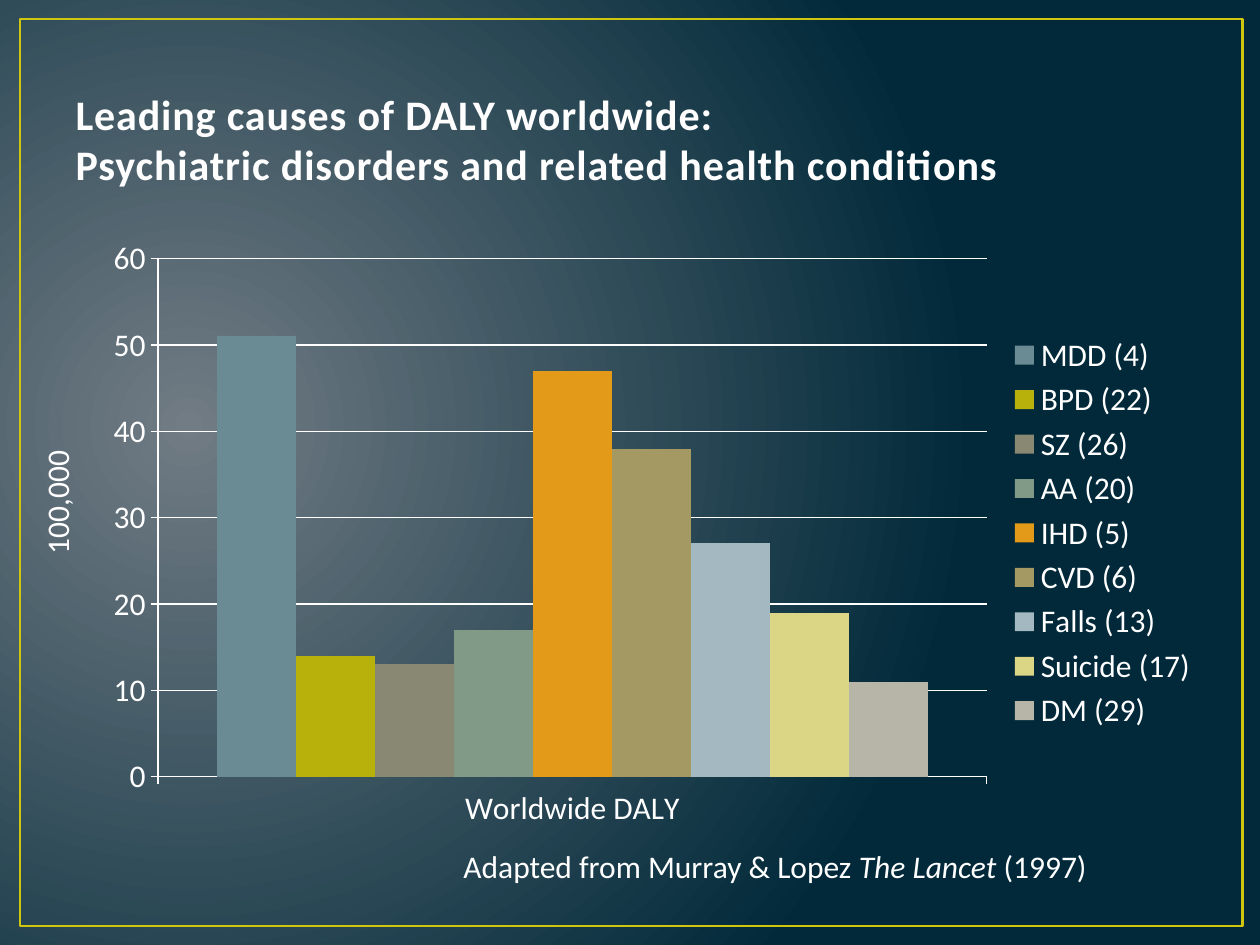
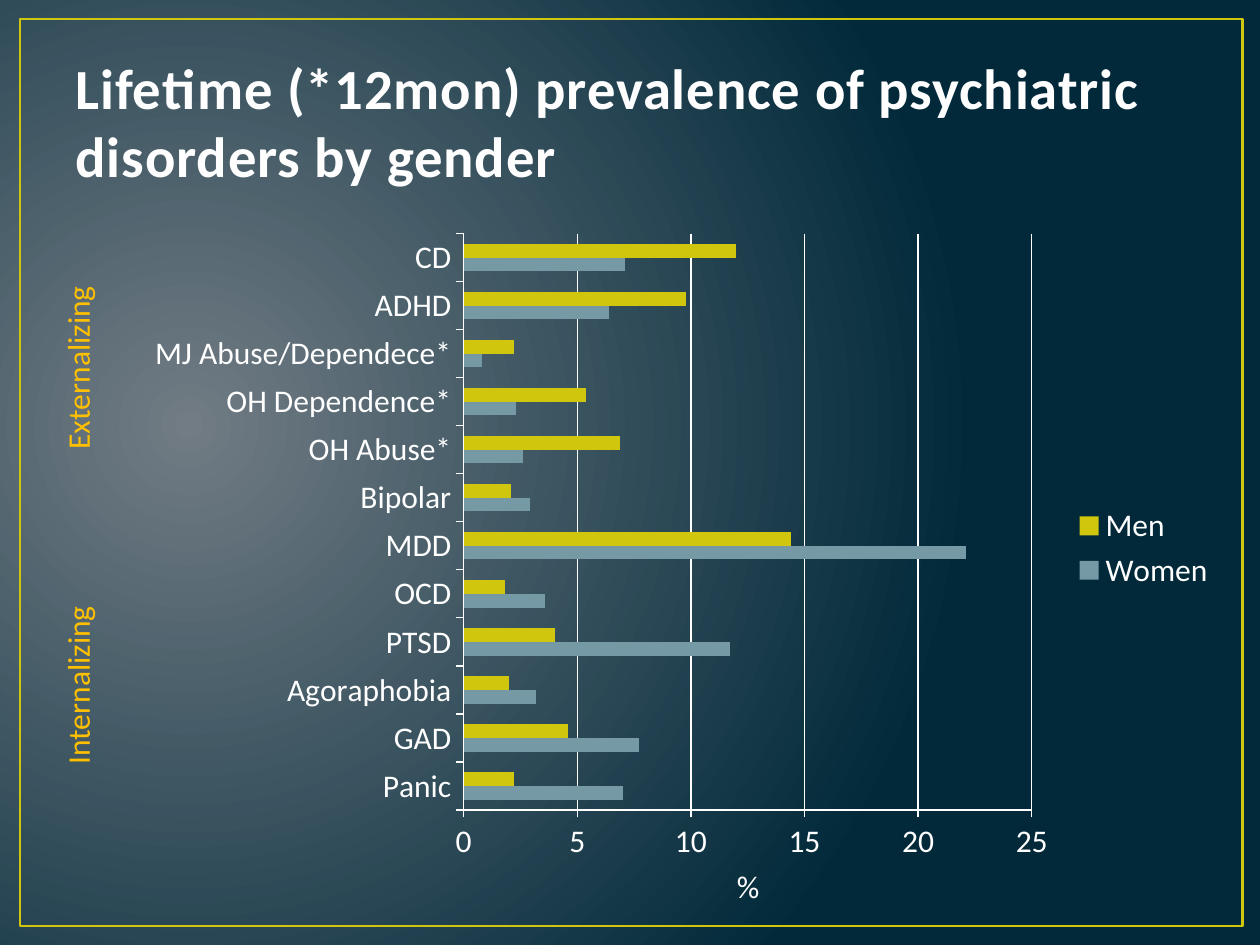
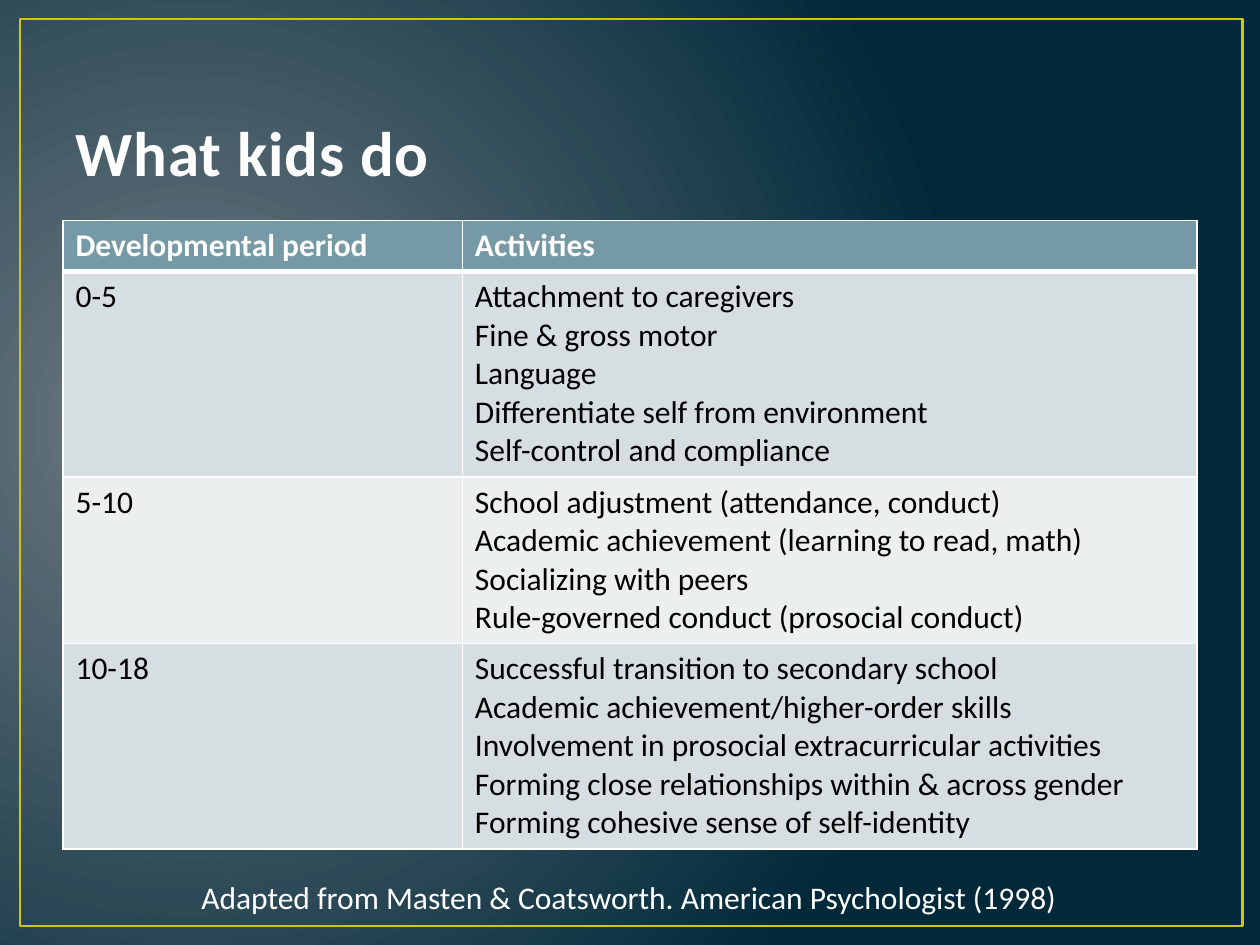
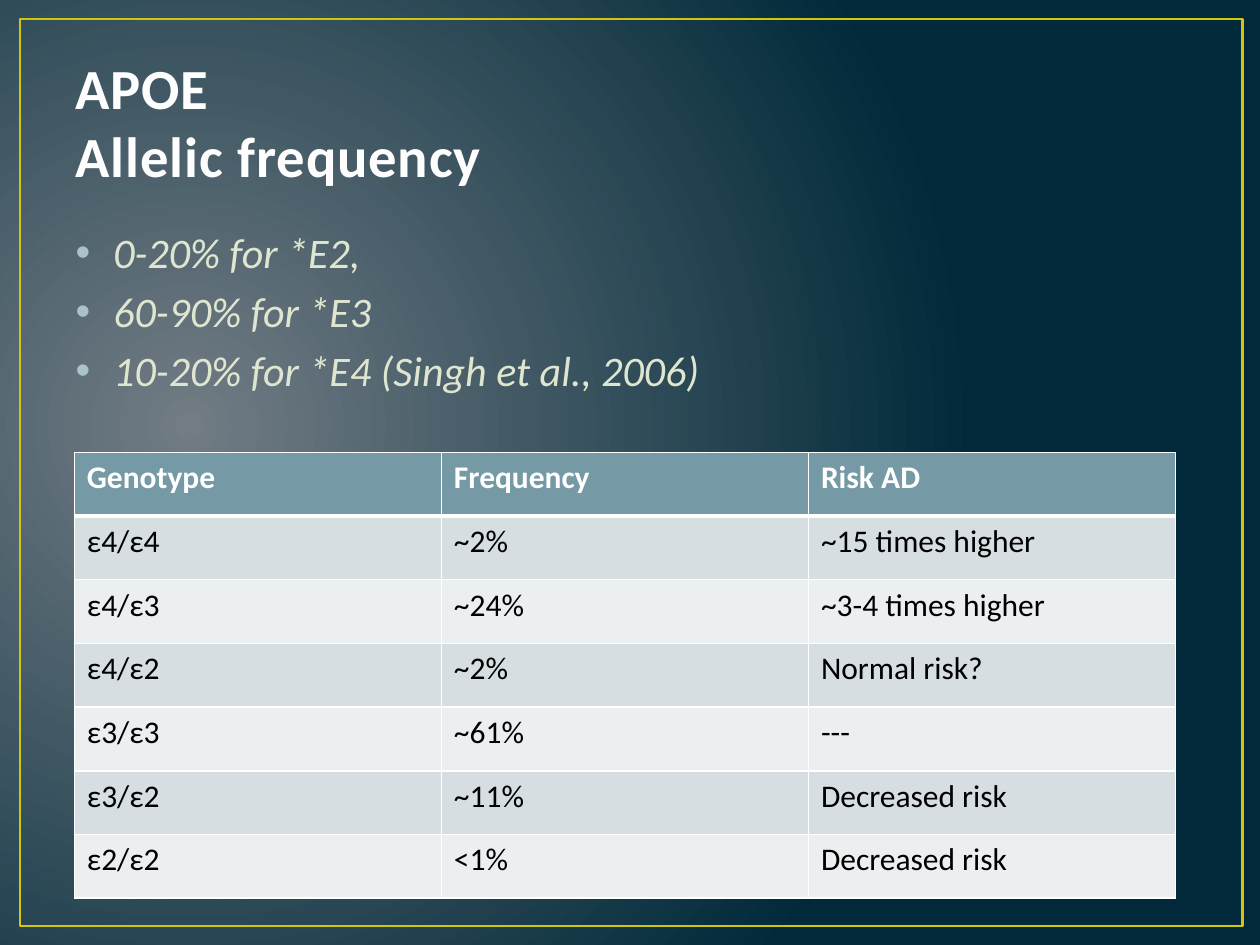
import copy
from dataclasses import dataclass
from typing import Any

import lxml.etree
import pptx
import pptx.chart.chart
import pptx.chart.data
import pptx.dml.color
import pptx.enum.chart
import pptx.enum.shapes
import pptx.enum.text
import pptx.oxml.ns
import pptx.presentation
import pptx.slide
import pptx.util

qn = pptx.oxml.ns.qn
Inches = pptx.util.Inches
Pt = pptx.util.Pt

FONT = "Calibri"
TEXT_SIZE = 18
COLORS = {
    "glow": "717C84", "night": "01293A", "frame": "CFC60D",
    "title": "FEFEFE", "title_edge": "384F55",
    "white": "FFFFFF", "black": "000000", "amber": "FFC000",
    "list": "DFE6D0", "bullet": "ACC2C9",
    "header": "759AA5", "odd_row": "D6DEE1", "even_row": "ECEFF0",
    "women": "759AA5", "men": "CFC60D",
    "mdd": "6A8B93", "bpd": "B9B10B", "sz": "898872", "aa": "819A87",
    "ihd": "E39A18", "cvd": "A49863", "falls": "A3B8C0",
    "suicide": "DBD686", "dm": "B6B5A7",
}
TITLE_ONLY, TITLE_AND_CONTENT = 5, 1


@dataclass
class Box:
    left: float
    top: float
    width: float
    height: float

    def lengths(self) -> list[int]:
        return [Inches(value) for value in (self.left, self.top, self.width, self.height)]


@dataclass
class Label:
    box: Box
    pieces: list[tuple[str, bool]]  # text, italic
    color: str = "white"
    rotation: int = 0


@dataclass
class Series:
    name: str
    values: list[float]
    color: str


@dataclass
class ChartPlan:
    kind: Any
    box: Box
    plot_area: dict[str, float]  # fractions of the chart
    categories: list[str]
    series: list[Series]
    maximum: float
    step: float


@dataclass
class TablePlan:
    box: Box
    columns: list[float]
    row_heights: list[float]
    rows: list[tuple[str, ...]]


def rgb(name: str) -> pptx.dml.color.RGBColor:
    return pptx.dml.color.RGBColor.from_string(COLORS[name])


def set_font(font: Any, color: str, size: float = TEXT_SIZE, **extra: Any) -> None:
    for attribute, value in {"name": FONT, "size": Pt(size), **extra}.items():
        setattr(font, attribute, value)
    font.color.rgb = rgb(color)


def add_color(parent: Any, tag: str, color: str) -> None:
    holder = lxml.etree.SubElement(parent, qn(tag))
    lxml.etree.SubElement(holder, qn("a:srgbClr"), val=COLORS[color])


def add_outline(parent: Any, tag: str, width: float, color: str) -> None:
    outline = lxml.etree.SubElement(parent, qn(tag), w=str(Pt(width)))
    add_color(outline, "a:solidFill", color)


def place(shape: Any, box: Box) -> None:
    shape.left, shape.top, shape.width, shape.height = box.lengths()


def paint_background(master: pptx.slide.SlideMaster) -> None:
    fill = master.background.fill
    fill.gradient()
    for stop, color in zip(fill.gradient_stops, ("glow", "night")):
        stop.color.rgb = rgb(color)
    gradient = master.element.find(".//" + qn("p:bg") + "//" + qn("a:gradFill"))
    gradient.remove(gradient.find(qn("a:lin")))
    circle = lxml.etree.SubElement(gradient, qn("a:path"))
    circle.set("path", "circle")
    lxml.etree.SubElement(circle, qn("a:fillToRect"),
                          l="15000", t="50000", r="85000", b="60000")


def add_frame(master: pptx.slide.SlideMaster, slide: pptx.slide.Slide) -> None:
    """Draw the border on a slide, then move it to the back of the master."""
    frame = slide.shapes.add_shape(pptx.enum.shapes.MSO_SHAPE.RECTANGLE,
                                   *Box(0.16, 0.15, 9.7, 7.2).lengths())
    frame.shadow.inherit = False
    frame.fill.background()
    frame.line.color.rgb = rgb("frame")
    frame.line.width = Pt(1.5)
    frame.element.nvSpPr.cNvPr.set("id", "20")
    master.shapes.element.insert(2, frame.element)


def add_slide(presentation: pptx.presentation.Presentation, title: str, size: float,
              layout: int = TITLE_ONLY) -> pptx.slide.Slide:
    slide = presentation.slides.add_slide(presentation.slide_layouts[layout])
    shape = slide.shapes.title
    place(shape, Box(0.5, 0.3, 9, 1.25))
    frame = shape.text_frame
    frame.text = title
    frame.auto_size = pptx.enum.text.MSO_AUTO_SIZE.NONE
    frame.vertical_anchor = pptx.enum.text.MSO_ANCHOR.BOTTOM
    paragraph = frame.paragraphs[0]
    paragraph.alignment = pptx.enum.text.PP_ALIGN.LEFT
    for run in paragraph.runs:
        properties = run.font._element
        properties.set("spc", "50")
        add_outline(properties, "a:ln", 1.05, "title_edge")
        set_font(run.font, "title", size, bold=True)
    for line_break in paragraph._p.findall(qn("a:br")):
        line_break.insert(0, copy.deepcopy(paragraph.runs[0].font._element))
    return slide


def add_label(slide: pptx.slide.Slide, label: Label) -> None:
    shape = slide.shapes.add_textbox(*label.box.lengths())
    shape.rotation = label.rotation
    shape.text_frame.word_wrap = True
    for text, italic in label.pieces:
        run = shape.text_frame.paragraphs[0].add_run()
        run.text = text
        set_font(run.font, label.color, italic=italic)


def fill_list(shape: Any, items: list[str]) -> None:
    place(shape, Box(0.5, 1.75, 9, 4.95))
    frame = shape.text_frame
    frame.auto_size = pptx.enum.text.MSO_AUTO_SIZE.NONE
    for index, item in enumerate(items):
        paragraph = frame.add_paragraph() if index else frame.paragraphs[0]
        properties = paragraph._p.get_or_add_pPr()
        properties.set("marL", str(Inches(0.3)))
        properties.set("indent", str(Inches(-0.3)))
        add_color(properties, "a:buClr", "bullet")
        lxml.etree.SubElement(properties, qn("a:buFont"), typeface="Arial")
        lxml.etree.SubElement(properties, qn("a:buChar"), char="•")
        paragraph.space_before = Pt(4.8 if index else 0)
        run = paragraph.add_run()
        run.text = item
        set_font(run.font, "list", 24, italic=True)


def fix_plot_area(chart: pptx.chart.chart.Chart, fractions: dict[str, float]) -> None:
    plot_area = chart.element.find(".//" + qn("c:plotArea"))
    for old in plot_area.findall(qn("c:layout")):
        plot_area.remove(old)
    layout = plot_area.makeelement(qn("c:layout"))
    plot_area.insert(0, layout)
    manual = lxml.etree.SubElement(layout, qn("c:manualLayout"))
    settings = {"layoutTarget": "inner", "xMode": "edge", "yMode": "edge", **fractions}
    for name, value in settings.items():
        lxml.etree.SubElement(manual, qn(f"c:{name}"), val=str(value))


def add_chart(slide: pptx.slide.Slide, plan: ChartPlan) -> None:
    data = pptx.chart.data.CategoryChartData()
    data.categories = plan.categories
    for series in plan.series:
        data.add_series(series.name, series.values)
    chart = slide.shapes.add_chart(plan.kind, *plan.box.lengths(), data).chart
    chart.has_title = False
    set_font(chart.font, "white")
    chart.has_legend = True
    chart.legend.position = pptx.enum.chart.XL_LEGEND_POSITION.RIGHT
    chart.legend.include_in_layout = False
    set_font(chart.legend.font, "white")

    plot = chart.plots[0]
    for attribute, value in {"gap_width": 150, "overlap": 0,
                             "vary_by_categories": False}.items():
        setattr(plot, attribute, value)
    for drawn, series in zip(plot.series, plan.series):
        drawn.invert_if_negative = False
        drawn.format.fill.solid()
        drawn.format.fill.fore_color.rgb = rgb(series.color)

    value_axis = chart.value_axis
    for attribute, value in {"minimum_scale": 0, "maximum_scale": plan.maximum,
                             "major_unit": plan.step, "has_major_gridlines": True}.items():
        setattr(value_axis, attribute, value)
    for axis in (chart.category_axis, value_axis):
        axis.major_tick_mark = pptx.enum.chart.XL_TICK_MARK.OUTSIDE
        set_font(axis.tick_labels.font, "white")
    for lined in (chart.category_axis, value_axis, value_axis.major_gridlines):
        lined.format.line.color.rgb = rgb("white")
        lined.format.line.width = Pt(0.75)
    fix_plot_area(chart, plan.plot_area)


def format_cell(cell: Any, row: int) -> None:
    thick_side = {0: "a:lnB", 1: "a:lnT"}.get(row)
    properties = cell._tc.get_or_add_tcPr()
    for side in ("a:lnL", "a:lnR", "a:lnT", "a:lnB"):
        add_outline(properties, side, 3 if side == thick_side else 1, "white")
    cell.fill.solid()
    fill = "header" if row == 0 else "odd_row" if row % 2 else "even_row"
    cell.fill.fore_color.rgb = rgb(fill)
    for paragraph in cell.text_frame.paragraphs:
        for run in paragraph.runs:
            set_font(run.font, "black" if row else "white", bold=row == 0)


def add_table(slide: pptx.slide.Slide, plan: TablePlan) -> None:
    table = slide.shapes.add_table(len(plan.rows), len(plan.columns),
                                   *plan.box.lengths()).table
    for column, width in zip(table.columns, plan.columns):
        column.width = Inches(width)
    for row, height in zip(table.rows, plan.row_heights):
        row.height = Inches(height)
    for row_index, texts in enumerate(plan.rows):
        for column_index, text in enumerate(texts):
            cell = table.cell(row_index, column_index)
            cell.text = text
            format_cell(cell, row_index)


DALY_CHART = ChartPlan(
    pptx.enum.chart.XL_CHART_TYPE.COLUMN_CLUSTERED,
    Box(0.72, 1.81, 8.89, 4.84),
    {"x": 0.06, "y": 0.05, "w": 0.74, "h": 0.85},
    ["Worldwide DALY"],
    [
        Series("MDD (4)", [51], "mdd"),
        Series("BPD (22)", [14], "bpd"),
        Series("SZ (26)", [13], "sz"),
        Series("AA (20)", [17], "aa"),
        Series("IHD (5)", [47], "ihd"),
        Series("CVD (6)", [38], "cvd"),
        Series("Falls (13)", [27], "falls"),
        Series("Suicide (17)", [19], "suicide"),
        Series("DM (29)", [11], "dm"),
    ],
    maximum=60, step=10,
)
PREVALENCE_CHART = ChartPlan(
    pptx.enum.chart.XL_CHART_TYPE.BAR_CLUSTERED,
    Box(1.08, 1.75, 8.67, 5.2),
    {"x": 0.3, "y": 0.02, "w": 0.52, "h": 0.88},
    ["Panic", "GAD", "Agoraphobia", "PTSD", "OCD", "MDD", "Bipolar", "OH Abuse*",
     "OH Dependence*", "MJ Abuse/Dependece*", "ADHD", "CD"],
    [
        Series("Women", [7, 7.7, 3.2, 11.7, 3.6, 22.1, 2.9, 2.6, 2.3, 0.8, 6.4, 7.1], "women"),
        Series("Men", [2.2, 4.6, 2, 4, 1.8, 14.4, 2.1, 6.9, 5.4, 2.2, 9.8, 12], "men"),
    ],
    maximum=25, step=5,
)
ACTIVITIES_TABLE = TablePlan(
    Box(0.5, 1.75, 9, 4.98), [3.17, 5.83], [0.4, 1.63, 1.32, 1.63],
    [
        ("Developmental period", "Activities"),
        ("0-5", "\n".join([
            "Attachment to caregivers", "Fine & gross motor", "Language",
            "Differentiate self from environment", "Self-control and compliance"])),
        ("5-10", "\n".join([
            "School adjustment (attendance, conduct)",
            "Academic achievement (learning to read, math)",
            "Socializing with peers", "Rule-governed conduct (prosocial conduct)"])),
        ("10-18", "\n".join([
            "Successful transition to secondary school",
            "Academic achievement/higher-order skills",
            "Involvement in prosocial extracurricular activities",
            "Forming close relationships within & across gender",
            "Forming cohesive sense of self-identity"])),
    ],
)
GENOTYPE_TABLE = TablePlan(
    Box(0.59, 3.59, 8.74, 3.54), [8.74 / 3] * 3, [3.54 / 7] * 7,
    [
        ("Genotype", "Frequency", "Risk AD"),
        ("ε4/ε4", "~2%", "~15 times higher"),
        ("ε4/ε3", "~24%", "~3-4 times higher"),
        ("ε4/ε2", "~2%", "Normal risk?"),
        ("ε3/ε3", "~61%", "---"),
        ("ε3/ε2", "~11%", "Decreased risk"),
        ("ε2/ε2", "<1%", "Decreased risk"),
    ],
)


def main() -> None:
    presentation = pptx.Presentation()
    presentation.slide_width = Inches(10)
    presentation.slide_height = Inches(7.5)
    master = presentation.slide_master
    paint_background(master)

    daly = add_slide(presentation, "Leading causes of DALY worldwide:\v"
                     "Psychiatric disorders and related health conditions", 24)
    add_frame(master, daly)
    add_chart(daly, DALY_CHART)
    add_label(daly, Label(Box(-0.08, 3.75, 1.08, 0.42), [("100,000", False)], rotation=270))
    add_label(daly, Label(Box(3.58, 6.67, 5.83, 0.4), [
        ("Adapted from Murray & Lopez ", False), ("The Lancet ", True), ("(1997)", False)]))

    prevalence = add_slide(
        presentation, "Lifetime (*12mon) prevalence of psychiatric disorders by gender", 32.4)
    add_chart(prevalence, PREVALENCE_CHART)
    for text, top in (("Externalizing", 2.59), ("Internalizing", 5.09)):
        add_label(prevalence, Label(Box(-0.26, top, 1.75, 0.4), [(text, False)], "amber", 270))
    add_label(prevalence, Label(Box(5.75, 6.83, 0.75, 0.4), [("%", False)]))

    activities = add_slide(presentation, "What kids do", 36)
    add_table(activities, ACTIVITIES_TABLE)
    add_label(activities, Label(Box(1.5, 6.92, 7.08, 0.4), [
        ("Adapted from Masten & Coatsworth. American Psychologist (1998)", False)]))

    alleles = add_slide(presentation, "APOE \vAllelic frequency", 32.4, TITLE_AND_CONTENT)
    fill_list(alleles.placeholders[1], [
        "0-20% for *E2,", "60-90% for *E3", "10-20% for *E4 (Singh et al., 2006)"])
    add_table(alleles, GENOTYPE_TABLE)

    presentation.save("out.pptx")


if __name__ == "__main__":
    main()
